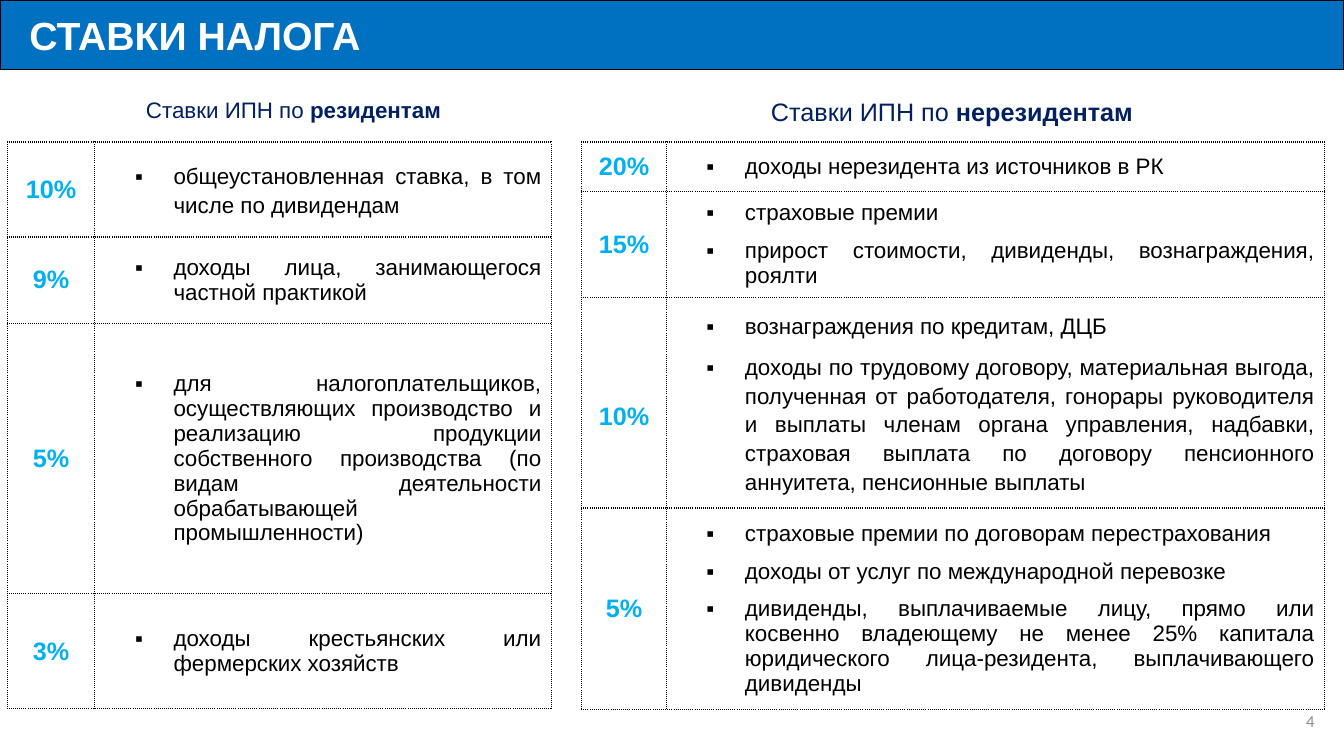
import pptx
import pptx.util
import pptx.dml.color
import pptx.enum.text
import pptx.oxml
import pptx.oxml.ns
from lxml import etree

Cm, Pt = pptx.util.Cm, pptx.util.Pt
ALIGN, ANCHOR = pptx.enum.text.PP_ALIGN, pptx.enum.text.MSO_ANCHOR
qn = pptx.oxml.ns.qn

COLORS = {"band": "0070C0", "white": "FFFFFF", "black": "000000",
          "rate": "00B0F0", "heading": "002060", "number": "8C8C8C"}

RESIDENTS = [
    ("10%", 2.39, 1.15, 0, ["общеустановленная ставка, в том числе по дивидендам"]),
    ("9%", 2.18, 1, 0, ["доходы лица, занимающегося частной практикой"]),
    ("5%", 6.81, 1, 0, ["для налогоплательщиков, осуществляющих производство и реализацию "
                        "продукции собственного производства (по видам деятельности "
                        "обрабатывающей промышленности)"]),
    ("3%", 2.9, 1, 0, ["доходы крестьянских или фермерских хозяйств"]),
]
NONRESIDENTS = [
    ("20%", 1.24, 1, 0, ["доходы нерезидента из источников в РК"]),
    ("15%", 2.67, 1, 0, ["страховые премии",
                         "прирост стоимости, дивиденды, вознаграждения, роялти"]),
    ("10%", 5.31, 1.15, 0.73, [
        "вознаграждения по кредитам, ДЦБ",
        "доходы по трудовому договору, материальная выгода, полученная от работодателя, "
        "гонорары руководителя и выплаты членам органа управления, надбавки, страховая "
        "выплата по договору пенсионного аннуитета, пенсионные выплаты"]),
    ("5%", 5.08, 1, 0, [
        "страховые премии по договорам перестрахования",
        "доходы от услуг по международной перевозке",
        "дивиденды, выплачиваемые лицу, прямо или косвенно владеющему не менее 25% "
        "капитала юридического лица-резидента, выплачивающего дивиденды"]),
]


def rgb(name):
    return pptx.dml.color.RGBColor.from_string(COLORS[name])


def style(font, size, color, bold=False, name="Arial"):
    font.name, font.size, font.bold = name, Pt(size), bold
    font.color.rgb = rgb(color)


def add_bullet(p):
    pPr = p._p.get_or_add_pPr()
    pPr.set("marL", str(Cm(1.73)))
    pPr.set("indent", str(-Cm(0.97)))
    clr = etree.SubElement(pPr, qn("a:buClr"))
    etree.SubElement(clr, qn("a:srgbClr"), val=COLORS["black"])
    etree.SubElement(pPr, qn("a:buFont"), typeface="Arial")
    etree.SubElement(pPr, qn("a:buChar"), char="▪")


def format_cell(cell):
    tcPr = cell._tc.get_or_add_tcPr()
    for side in ("lnL", "lnR", "lnT", "lnB"):
        ln = etree.SubElement(tcPr, qn("a:" + side), w=str(Pt(1)))
        fill = etree.SubElement(ln, qn("a:solidFill"))
        etree.SubElement(fill, qn("a:srgbClr"), val=COLORS["black"])
        etree.SubElement(ln, qn("a:prstDash"), val="sysDot")
    cell.fill.solid()
    cell.fill.fore_color.rgb = rgb("white")
    cell.vertical_anchor = ANCHOR.MIDDLE


def add_title(s, text, x, y, w, h):
    sp = s.shapes.title
    sp.left, sp.top, sp.width, sp.height = Cm(x), Cm(y), Cm(w), Cm(h)
    sp.fill.solid()
    sp.fill.fore_color.rgb = rgb("band")
    sp.line.color.rgb = rgb("black")
    sp.line.width = Pt(1)
    tf = sp.text_frame
    tf.text = text
    tf.auto_size = pptx.enum.text.MSO_AUTO_SIZE.NONE
    tf.vertical_anchor = ANCHOR.MIDDLE
    tf.margin_left = Cm(0.74)
    p = tf.paragraphs[0]
    p.alignment = ALIGN.LEFT
    style(p.runs[0].font, 28, "white", True)


def add_heading(s, group, size, x, y, w, h):
    tf = s.shapes.add_textbox(Cm(x), Cm(y), Cm(w), Cm(h)).text_frame
    tf.word_wrap = False
    p = tf.paragraphs[0]
    for text, bold in (("Ставки ИПН по ", False), (group, True)):
        r = p.add_run()
        r.text = text
        style(r.font, size, "heading", bold)


def add_rates(s, rates, x, y, w, rate_w):
    h = sum(rate[1] for rate in rates)
    table = s.shapes.add_table(len(rates), 2, Cm(x), Cm(y), Cm(w), Cm(h)).table
    table.first_row = table.horz_banding = False
    table.columns[0].width, table.columns[1].width = Cm(rate_w), Cm(w - rate_w)
    for row, (rate, row_h, spacing, drop, items) in zip(table.rows, rates):
        row.height = Cm(row_h)
        rate_cell, item_cell = row.cells
        for cell in row.cells:
            format_cell(cell)
        rate_cell.margin_top = Cm(0.13 + drop)
        rate_cell.text_frame.text = rate
        p = rate_cell.text_frame.paragraphs[0]
        p.alignment = ALIGN.CENTER
        style(p.runs[0].font, 18, "rate", True)
        tf = item_cell.text_frame
        tf.text = "\n".join(items)
        for i, p in enumerate(tf.paragraphs):
            p.alignment = ALIGN.JUSTIFY
            p.line_spacing = float(spacing)
            p.space_before = Pt(9 if i else 0)
            add_bullet(p)
            style(p.runs[0].font, 16, "black")


def add_number(s, number, x, y, w, h):
    tf = s.shapes.add_textbox(Cm(x), Cm(y), Cm(w), Cm(h)).text_frame
    tf.word_wrap = True
    tf.vertical_anchor = ANCHOR.MIDDLE
    p = tf.paragraphs[0]
    p.text = number
    p.alignment = ALIGN.RIGHT
    style(p.runs[0].font, 12, "number", name="Calibri")


def main():
    prs = pptx.Presentation()
    prs.slide_width, prs.slide_height = Cm(33.87), Cm(19.05)
    s = prs.slides.add_slide(prs.slide_layouts[5])
    add_title(s, "СТАВКИ НАЛОГА", 0, 0, 33.87, 1.75)
    add_heading(s, "резидентам", 16, 3.43, 2.31, 8.05, 0.94)
    add_rates(s, RESIDENTS, 0.18, 3.58, 13.72, 2.21)
    add_heading(s, "нерезидентам", 18, 19.18, 2.31, 9.73, 1.02)
    add_rates(s, NONRESIDENTS, 14.66, 3.58, 18.72, 2.13)
    add_number(s, "4", 25.76, 17.65, 7.62, 1.02)
    prs.save("out.pptx")


if __name__ == "__main__":
    main()
